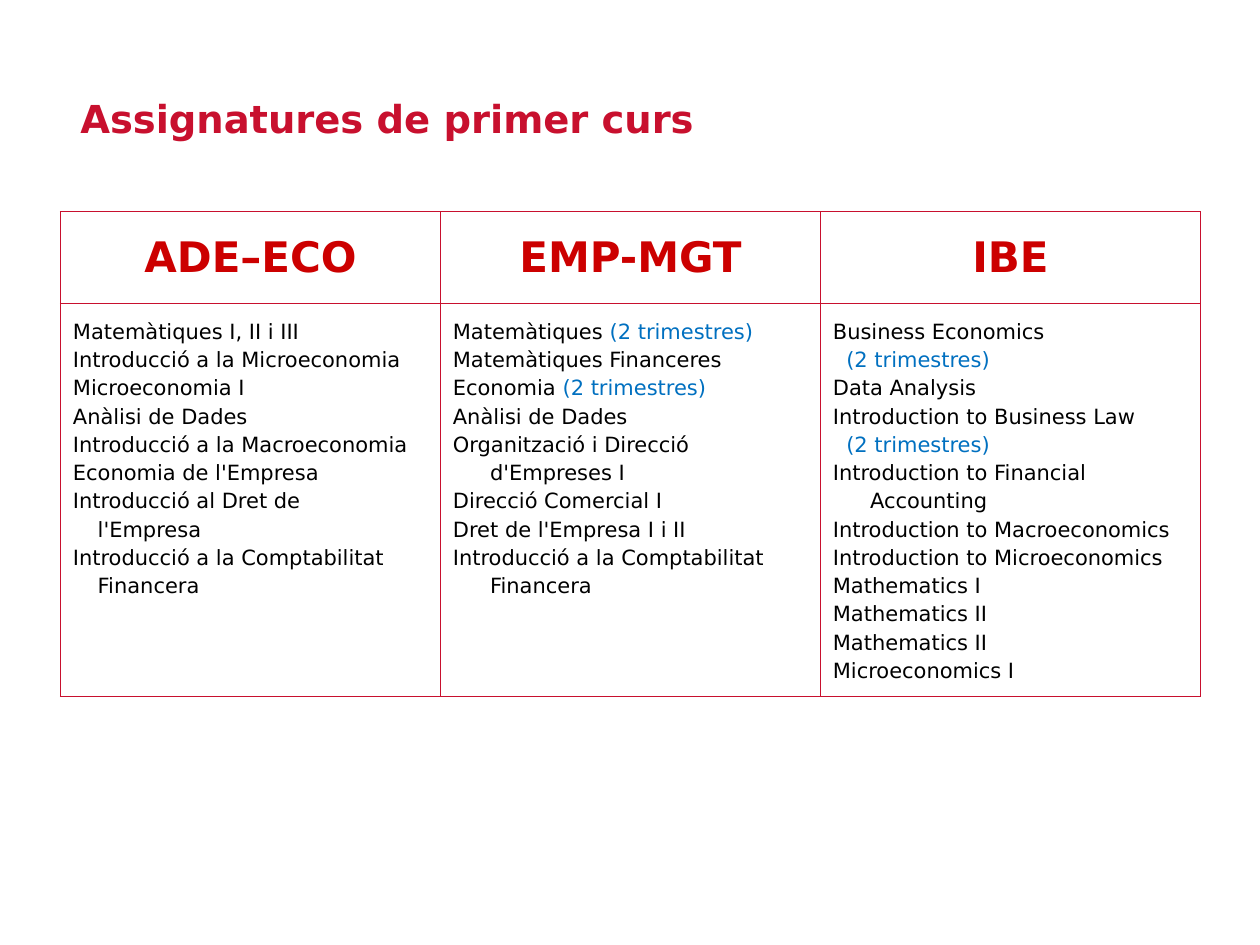
"""Builds the slide that lists the first-year subjects of each degree."""
from dataclasses import dataclass

from lxml import etree
from pptx import Presentation
from pptx import util as u
from pptx.dml.color import RGBColor
from pptx.enum import text
from pptx.oxml import ns

COLORS = {"title": "C8102E", "degree": "CC0000", "subject": "000000",
          "terms": "0070C0", "border": "C8102E", "paper": "FFFFFF"}
FONT = "DejaVu Sans"
INSET = u.Cm(0.25)


@dataclass
class Line:
    pieces: tuple
    left: float = 0
    first: float = 0


def subject(name, terms=""):
    return Line(((name, "subject"), (terms, "terms")))


def hanging(name, depth):
    return Line(((name, "subject"),), depth, -depth)


TERMS = "(2 trimestres)"
TERMS_BELOW = Line(((TERMS, "terms"),), 0.27)

DEGREES = {
    "ADE–ECO": [
        subject("Matemàtiques I, II i III"),
        subject("Introducció a la Microeconomia"),
        subject("Microeconomia I"),
        subject("Anàlisi de Dades"),
        subject("Introducció a la Macroeconomia"),
        subject("Economia de l'Empresa"),
        hanging("Introducció al Dret de\nl'Empresa", 0.5),
        hanging("Introducció a la Comptabilitat Financera", 0.5),
    ],
    "EMP-MGT": [
        subject("Matemàtiques ", TERMS),
        subject("Matemàtiques Financeres"),
        subject("Economia ", TERMS),
        subject("Anàlisi de Dades"),
        hanging("Organització i Direcció d'Empreses I", 0.75),
        subject("Direcció Comercial I"),
        subject("Dret de l'Empresa I i II"),
        hanging("Introducció a la Comptabilitat Financera", 0.75),
    ],
    "IBE": [
        subject("Business Economics"),
        TERMS_BELOW,
        subject("Data Analysis"),
        subject("Introduction to Business Law"),
        TERMS_BELOW,
        hanging("Introduction to Financial Accounting", 0.75),
        subject("Introduction to Macroeconomics"),
        subject("Introduction to Microeconomics"),
        subject("Mathematics I"),
        subject("Mathematics II"),
        subject("Mathematics II"),
        subject("Microeconomics I"),
    ],
}


class SlideBuilder:
    """Holds the style and the current slide."""

    def __init__(self, slide):
        self.slide = slide

    def add_wording(self, paragraph, wording, color, size, bold=False):
        for number, part in enumerate(wording.split("\n")):
            if number:
                paragraph.add_line_break()
            run = paragraph.add_run()
            run.text = part
            run.font.name = FONT
            run.font.size = u.Pt(size)
            run.font.bold = bold
            run.font.color.rgb = RGBColor.from_string(COLORS[color])

    def title(self, wording, left, top, width, height):
        frame = self.slide.shapes.add_textbox(
            u.Cm(left), u.Cm(top), u.Cm(width), u.Cm(height)).text_frame
        frame.word_wrap = True
        frame.vertical_anchor = text.MSO_ANCHOR.MIDDLE
        frame.margin_left = frame.margin_right = frame.margin_top = INSET
        frame.margin_bottom = u.Cm(1.07)
        self.add_wording(frame.paragraphs[0], wording, "title", 22, True)

    def style_cell(self, cell):
        cell.margin_left = cell.margin_right = INSET
        cell.margin_top = cell.margin_bottom = INSET
        cell.fill.solid()
        cell.fill.fore_color.rgb = RGBColor.from_string(COLORS["paper"])
        properties = cell._tc.get_or_add_tcPr()
        for position, side in enumerate(("lnL", "lnR", "lnT", "lnB")):
            edge = etree.Element(ns.qn(f"a:{side}"), w=str(u.Pt(0.75)))
            fill = etree.SubElement(edge, ns.qn("a:solidFill"))
            etree.SubElement(fill, ns.qn("a:srgbClr"), val=COLORS["border"])
            properties.insert(position, edge)

    def heading(self, cell, degree):
        self.style_cell(cell)
        cell.vertical_anchor = text.MSO_ANCHOR.MIDDLE
        paragraph = cell.text_frame.paragraphs[0]
        paragraph.alignment = text.PP_ALIGN.CENTER
        self.add_wording(paragraph, degree, "degree", 24, True)

    def subjects(self, cell, lines):
        self.style_cell(cell)
        frame = cell.text_frame
        for number, line in enumerate(lines):
            paragraph = frame.add_paragraph() if number else frame.paragraphs[0]
            paragraph.line_spacing = 1.15
            if line.left:
                properties = paragraph._p.get_or_add_pPr()
                properties.set("marL", str(u.Cm(line.left)))
                properties.set("indent", str(u.Cm(line.first)))
            for wording, color in line.pieces:
                if wording:
                    self.add_wording(paragraph, wording, color, 12)

    def degree_table(self, degrees, left, top, column_width, row_heights):
        table = self.slide.shapes.add_table(
            len(row_heights), len(degrees), u.Cm(left), u.Cm(top),
            u.Cm(column_width * len(degrees)), u.Cm(sum(row_heights))).table
        for row, height in zip(table.rows, row_heights):
            row.height = u.Cm(height)
        for column, (degree, lines) in enumerate(degrees.items()):
            table.columns[column].width = u.Cm(column_width)
            self.heading(table.cell(0, column), degree)
            self.subjects(table.cell(1, column), lines)


def main():
    deck = Presentation()
    deck.slide_width, deck.slide_height = u.Cm(25.4), u.Cm(19.05)
    builder = SlideBuilder(deck.slides.add_slide(deck.slide_layouts[6]))
    builder.degree_table(DEGREES, 1.22, 4.27, 7.66, (1.85, 7.92))
    builder.title("Assignatures de primer curs", 1.37, 1.5, 21.26, 2.59)
    deck.save("out.pptx")


if __name__ == "__main__":
    main()
